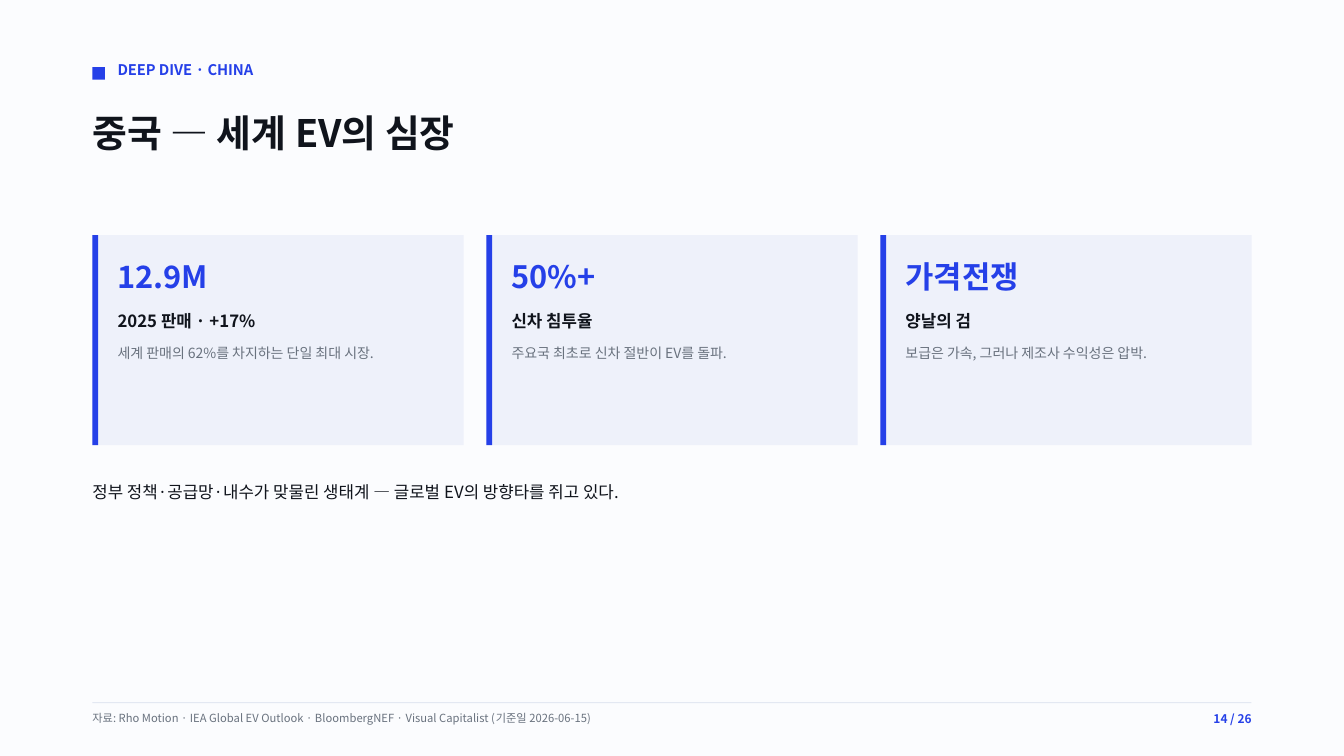
from dataclasses import dataclass

from lxml import etree
from pptx import Presentation
from pptx import util as u
from pptx.dml.color import RGBColor
from pptx.enum import shapes, text
from pptx.oxml import ns


@dataclass(frozen=True)
class Theme:
    font: str = "Noto Sans CJK KR"
    # Colours
    paper: str = "FBFCFE"
    ink: str = "10141C"
    blue: str = "2540E8"
    gray: str = "69727E"
    card: str = "EEF1FA"
    rule: str = "E3E8F2"
    # Type sizes in points
    title: float = 27
    stat: float = 22
    body: float = 12
    label: float = 10.5
    note: float = 10
    page: float = 8.5
    source: float = 8


PX = 7620  # EMU in one px: 1600 by 900 px
LEFT, WIDTH = 110, 1380
GAP, TOP, HIGH, PAD = 27, 280, 250, 30


def px(*sizes):
    return [u.Emu(size * PX) for size in sizes]


def write(frame, words, *, font, size, color, bold=False, wrap=True, right=False):
    frame.margin_left = frame.margin_top = 0
    frame.margin_right = frame.margin_bottom = 0
    frame.vertical_anchor = text.MSO_ANCHOR.TOP
    frame.word_wrap = wrap
    frame.auto_size = text.MSO_AUTO_SIZE.SHAPE_TO_FIT_TEXT
    para = frame.paragraphs[0]
    para.alignment = text.PP_ALIGN.RIGHT if right else text.PP_ALIGN.LEFT
    run = para.add_run()
    run.text = words
    style = run.font
    style.name, style.size, style.bold = font, u.Pt(size), bold
    style.color.rgb = RGBColor.from_string(color)
    # Hangul takes the East Asian typeface
    latin = run._r.rPr.find(ns.qn("a:latin"))
    asian = etree.Element(ns.qn("a:ea"), typeface=font)
    latin.addnext(asian)


class Deck:
    def __init__(self, theme):
        self.theme = theme
        self.file = Presentation()
        self.file.slide_width, self.file.slide_height = px(1600, 900)
        self.slide = self.file.slides.add_slide(self.file.slide_layouts[5])
        fill = self.slide.background.fill
        fill.solid()
        fill.fore_color.rgb = RGBColor.from_string(theme.paper)

    def title(self, words, *place):
        head = self.slide.shapes.title
        head.left, head.top, head.width, head.height = px(*place)
        write(head.text_frame, words, font=self.theme.font,
              size=self.theme.title, color=self.theme.ink, bold=True)

    def text(self, words, *place, **form):
        box = self.slide.shapes.add_textbox(*px(*place))
        write(box.text_frame, words, font=self.theme.font, **form)

    def rect(self, color, *place):
        block = self.slide.shapes.add_shape(
            shapes.MSO_SHAPE.RECTANGLE, *px(*place))
        block.shadow.inherit = False
        block.fill.solid()
        block.fill.fore_color.rgb = RGBColor.from_string(color)
        block.line.fill.background()

    def card(self, left, width, stat, label, note):
        look = self.theme
        self.rect(look.card, left, TOP, width, HIGH)
        self.rect(look.blue, left, TOP, 7, HIGH)
        inner, span = left + PAD, width - 53
        self.text(stat, inner, TOP + 27, span, 44,
                  size=look.stat, color=look.blue, bold=True)
        self.text(label, inner, TOP + 90, span, 24,
                  size=look.body, color=look.ink, bold=True)
        self.text(note, inner, TOP + 130, span, 20,
                  size=look.note, color=look.gray)


def main():
    look = Theme()
    deck = Deck(look)

    # Heading
    deck.rect(look.blue, LEFT, 80, 15, 15)
    deck.text("DEEP DIVE · CHINA", LEFT + PAD, 72, 163, 22,
              size=look.label, color=look.blue, bold=True, wrap=False)
    deck.title("중국 — 세계 EV의 심장", LEFT, 130, WIDTH, 54)

    # Three equal cards
    cards = [
        ("12.9M", "2025 판매 · +17%", "세계 판매의 62%를 차지하는 단일 최대 시장."),
        ("50%+", "신차 침투율", "주요국 최초로 신차 절반이 EV를 돌파."),
        ("가격전쟁", "양날의 검", "보급은 가속, 그러나 제조사 수익성은 압박."),
    ]
    width = (WIDTH - GAP * (len(cards) - 1)) // len(cards)
    for index, card in enumerate(cards):
        deck.card(LEFT + index * (width + GAP), width, *card)

    # Closing line
    deck.text("정부 정책·공급망·내수가 맞물린 생태계 — 글로벌 EV의 방향타를 쥐고 있다.",
              LEFT, 574, WIDTH, 24, size=look.body, color=look.ink)

    # Footer
    deck.rect(look.rule, LEFT, 836, WIDTH, 1)
    deck.text("자료: Rho Motion · IEA Global EV Outlook · BloombergNEF · "
              "Visual Capitalist (기준일 2026-06-15)",
              LEFT, 847, 1280, 16, size=look.source, color=look.gray)
    deck.text("14 / 26", LEFT + 1280, 847, 100, 17,
              size=look.page, color=look.blue, bold=True, right=True)

    deck.file.save("out.pptx")


if __name__ == "__main__":
    main()
